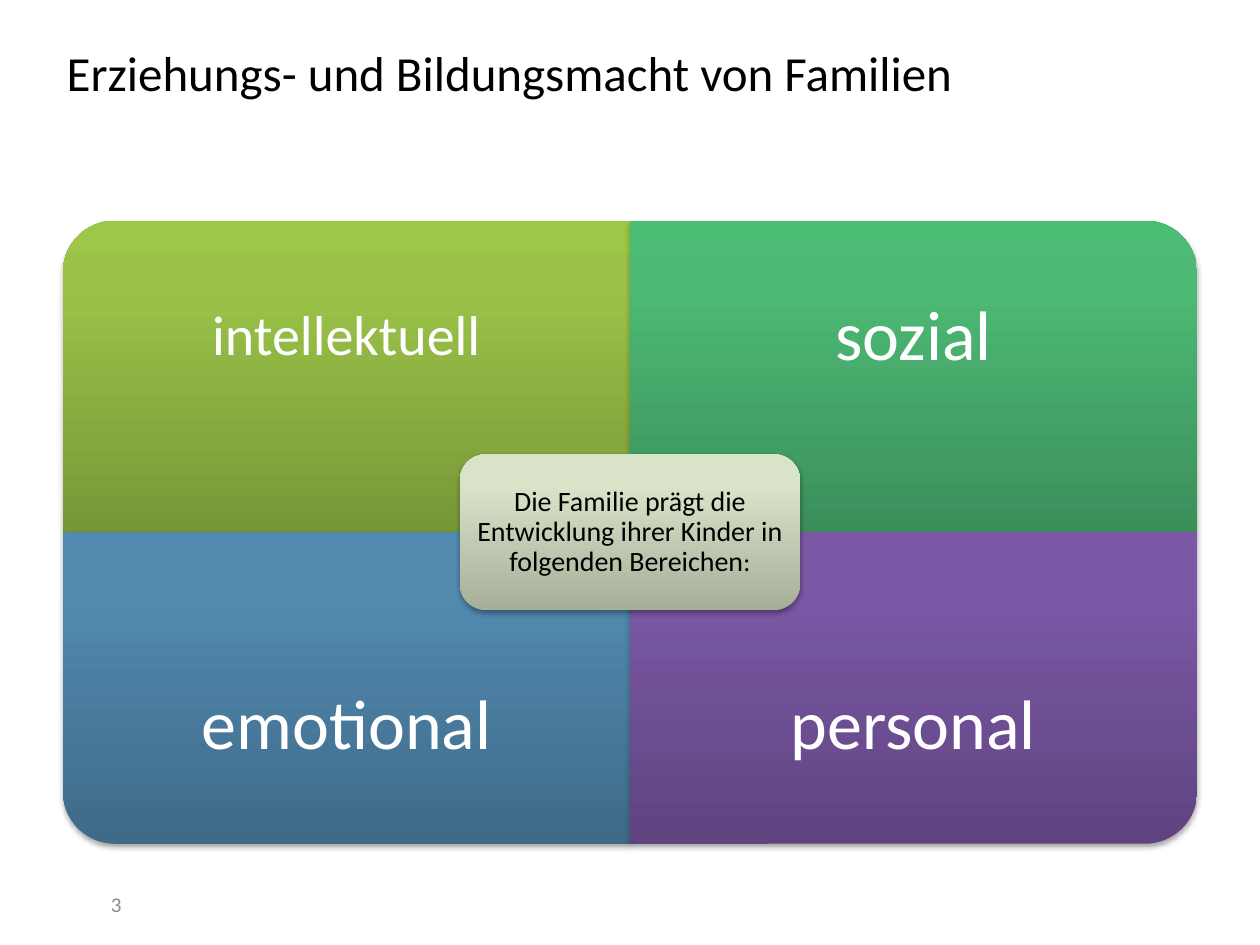
from pptx import Presentation, oxml
from pptx import util as u
from pptx.dml import color
from pptx.enum import shapes, text
from pptx.oxml import ns

FONT = "Calibri"
QUADS = [
    ("intellektuell", 32, 0.64, 270, ("779737", "9BC348", "9DC746")),
    ("sozial", 40, 0.79, 0, ("3B8F5A", "4DBA75", "4BBD75")),
    ("emotional", 40, 0.79, 180, ("3F6A88", "528AB0", "518BB3")),
    ("personal", 40, 0.79, 90, ("5F4480", "7B58A6", "7C57A8")),
]
LEFT, TOP, WIDE, HIGH = 1.27, 4.45, 11.43, 6.28


def rgb(code):
    return color.RGBColor.from_string(code)


class Deck:
    def __init__(self):
        self.show = Presentation()
        self.show.slide_width = u.Cm(25.4)
        self.show.slide_height = u.Cm(19.05)
        self.slide = self.show.slides.add_slide(self.show.slide_layouts[5])
        self.group = self.slide.shapes.add_group_shape()

    def style(self, par, size, tint, align):
        par.alignment = align
        for run in par.runs:
            run.font.name = FONT
            run.font.size = u.Pt(size)
            run.font.color.rgb = rgb(tint)

    def title(self, words, box):
        head = self.slide.shapes.title
        head.left, head.top, head.width, head.height = map(u.Cm, box)
        head.text_frame.text = words
        head.text_frame.vertical_anchor = text.MSO_ANCHOR.MIDDLE
        self.style(head.text_frame.paragraphs[0], 28, "000000", text.PP_ALIGN.LEFT)

    def panel(self, kind, box, tints, turn=0):
        item = self.group.shapes.add_shape(kind, *map(u.Cm, box))
        item.rotation = turn
        item.line.fill.background()
        stops = "".join(
            f'<a:gs pos="{pos}"><a:srgbClr val="{tint}"/></a:gs>'
            for pos, tint in zip((0, 80000, 100000), tints))
        props = item._element.spPr
        props.insert(2, oxml.parse_xml(
            f'<a:gradFill {ns.nsdecls("a")} rotWithShape="0"><a:gsLst>{stops}</a:gsLst>'
            '<a:lin ang="16200000" scaled="0"/></a:gradFill>'))
        props.append(oxml.parse_xml(
            f'<a:effectLst {ns.nsdecls("a")}><a:outerShdw blurRad="40000" dist="23000" '
            'dir="5400000" rotWithShape="0"><a:srgbClr val="000000">'
            '<a:alpha val="35000"/></a:srgbClr></a:outerShdw></a:effectLst>'))

    def label(self, home, words, box, size, tint, inset=None,
              align=text.PP_ALIGN.CENTER, space=0.9):
        frame = home.shapes.add_textbox(*map(u.Cm, box)).text_frame
        frame.word_wrap = True
        frame.vertical_anchor = text.MSO_ANCHOR.MIDDLE
        if inset is not None:
            frame.margin_left = frame.margin_right = u.Cm(inset)
            frame.margin_top = frame.margin_bottom = u.Cm(inset)
        frame.text = words
        par = frame.paragraphs[0]
        par.line_spacing = space
        self.style(par, size, tint, align)
        return par


def main():
    deck = Deck()
    deck.title("Erziehungs- und Bildungsmacht von Familien", (1.09, 0.74, 21.03, 1.4))

    for i, (words, size, inset, turn, tints) in enumerate(QUADS):
        row, col = divmod(i, 2)
        x, y = LEFT + col * WIDE, TOP + row * HIGH
        wide, high = (HIGH, WIDE) if turn % 180 else (WIDE, HIGH)
        box = (x + (WIDE - wide) / 2, y + (HIGH - high) / 2, wide, high)
        deck.panel(shapes.MSO_SHAPE.ROUND_1_RECTANGLE, box, tints, turn)
        part = HIGH * 0.75
        deck.label(deck.group, words, (x, y + row * (HIGH - part), WIDE, part),
                   size, "FFFFFF", inset)

    wide, high, pad = WIDE * 0.6, HIGH / 2, 0.15
    x, y = LEFT + WIDE - wide / 2, TOP + HIGH - high / 2
    deck.panel(shapes.MSO_SHAPE.ROUNDED_RECTANGLE, (x, y, wide, high),
               ("A6AF9A", "D8E3C8", "D9E4C8"))
    par = deck.label(
        deck.group, "Die Familie prägt die Entwicklung ihrer Kinder in folgenden Bereichen",
        (x + pad, y + pad, wide - 2 * pad, high - 2 * pad), 16, "000000", 0.18)
    par.add_run().text = ":"
    deck.style(par, 16, "000000", text.PP_ALIGN.CENTER)
    par.runs[-1].font.size = u.Pt(15)

    deck.label(deck.slide, "3", (1.3, 17.73, 1.4, 0.99), 12, "8C8C8C",
               align=text.PP_ALIGN.RIGHT, space=1.0)
    deck.show.save("out.pptx")


if __name__ == "__main__":
    main()
